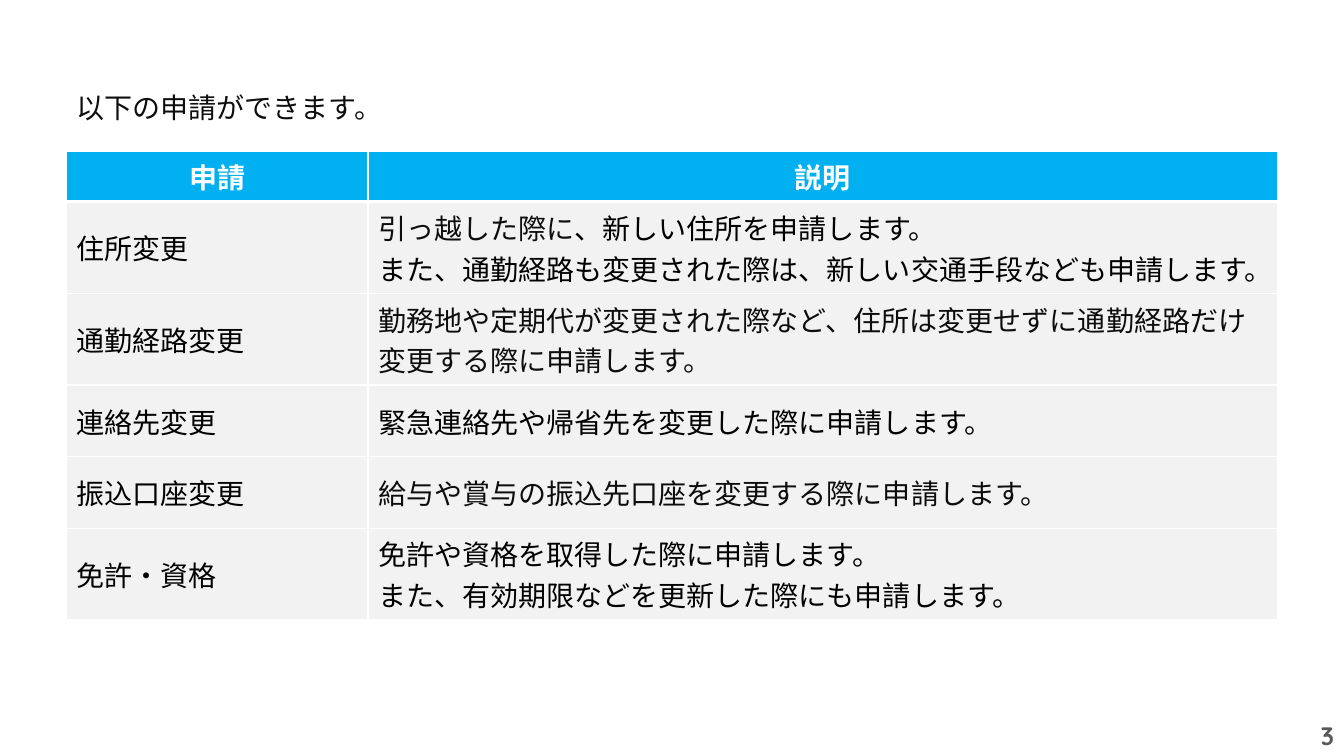
import pptx
import pptx.dml.color
import pptx.enum.text
import pptx.oxml
import pptx.oxml.ns
import pptx.util

Inches = pptx.util.Inches
Pt = pptx.util.Pt
RGBColor = pptx.dml.color.RGBColor
ALIGN = pptx.enum.text.PP_ALIGN
MIDDLE = pptx.enum.text.MSO_ANCHOR.MIDDLE

WHITE = RGBColor(0xFF, 0xFF, 0xFF)
BLACK = RGBColor(0x00, 0x00, 0x00)
INK = RGBColor(0x0D, 0x0D, 0x0D)
GRAY = RGBColor(0x59, 0x59, 0x59)
BLUE = RGBColor(0x00, 0xB0, 0xF0)
PALE = RGBColor(0xF2, 0xF2, 0xF2)
JP_FONT = "Noto Sans CJK JP"


def add_run(p, text, color, **formats):
    """Add a run; a vertical tab in the text becomes a line break."""
    for i, line in enumerate(text.split("\v")):
        if i:
            p.add_line_break()
        r = p.add_run()
        r.text = line
        values = {"name": JP_FONT, "size": Pt(20), "bold": False, **formats}
        for name, value in values.items():
            setattr(r.font, name, value)
        r.font.color.rgb = color
        ea = pptx.oxml.parse_xml(
            f'<a:ea {pptx.oxml.ns.nsdecls("a")} typeface="{values["name"]}"/>')
        r.font._element.find(pptx.oxml.ns.qn("a:latin")).addnext(ea)


def add_border(cell, side, width):
    cell._tc.get_or_add_tcPr().append(pptx.oxml.parse_xml(
        f'<a:ln{side} {pptx.oxml.ns.nsdecls("a")} w="{Pt(width)}">'
        f'<a:solidFill><a:srgbClr val="{WHITE}"/></a:solidFill></a:ln{side}>'))


prs = pptx.Presentation()
prs.slide_width, prs.slide_height = Inches(13.33), Inches(7.5)
s = prs.slides.add_slide(prs.slide_layouts[6])

# Page number
sp = s.shapes.add_textbox(Inches(10.33), Inches(7.1), Inches(3), Inches(0.4))
tf = sp.text_frame
tf.word_wrap = True
tf.vertical_anchor = MIDDLE
p = tf.paragraphs[0]
p.alignment = ALIGN.RIGHT
add_run(p, "3", GRAY, name="Quicksand", size=Pt(18), bold=True)

# Table: each cell is a list of paragraphs, each paragraph a list of runs
rows = [
    ([[("申請", WHITE)]], [[("説明", WHITE)]]),
    ([[("住所変更", BLACK)]],
     [[("引っ越した際に", INK),
       ("、新しい住所を申請します。\vまた、通勤経路も変更された際は、新しい交通手段なども申請します。", BLACK)]]),
    ([[("通勤経路変更", BLACK)]],
     [[("勤務地や定期代が変更された際など、住所は変更せずに通勤経路だけ変更する際に申請します。", INK)]]),
    ([[("連絡先変更", BLACK)]],
     [[("緊急連絡先や帰省先を変更した際に申請します。", BLACK)]]),
    ([[("振込口座変更", BLACK)]],
     [[("給与や賞与の振込先口座を変更する際に申請します。", INK)]]),
    ([[("免許・資格", BLACK)]],
     [[("免許や資格を取得した際に申請します。", BLACK)],
      [("また、有効期限などを更新した際にも申請します。", BLACK)]]),
]
HEADER, ONE_LINE, TWO_LINES = 0.5, 0.71, 0.91
col_widths = [2.99, 9.02]
row_heights = [HEADER, TWO_LINES, TWO_LINES, ONE_LINE, ONE_LINE, TWO_LINES]
table = s.shapes.add_table(
    len(rows), len(col_widths), Inches(0.66), Inches(1.5),
    Inches(sum(col_widths)), Inches(sum(row_heights))).table
for col, width in zip(table.columns, col_widths):
    col.width = Inches(width)
for row, height in zip(table.rows, row_heights):
    row.height = Inches(height)

for i, row in enumerate(rows):
    header = i == 0
    for j, paragraphs in enumerate(row):
        cell = table.cell(i, j)
        cell.vertical_anchor = MIDDLE
        for side in "LRTB":
            thick = (header and side == "B") or (i == 1 and side == "T")
            add_border(cell, side, 3 if thick else 1)
        cell.fill.solid()
        cell.fill.fore_color.rgb = BLUE if header else PALE
        tf = cell.text_frame
        for k, runs in enumerate(paragraphs):
            p = tf.add_paragraph() if k else tf.paragraphs[0]
            p.alignment = ALIGN.CENTER if header else ALIGN.LEFT
            for text, color in runs:
                add_run(p, text, color, bold=header)

# Introduction
sp = s.shapes.add_textbox(Inches(0.66), Inches(0.76), Inches(12), Inches(0.47))
tf = sp.text_frame
tf.word_wrap = True
tf.margin_top = Inches(0.04)
p = tf.paragraphs[0]
p.line_spacing = 1.3
add_run(p, "以下の申請ができます。", INK)

prs.save("out.pptx")
